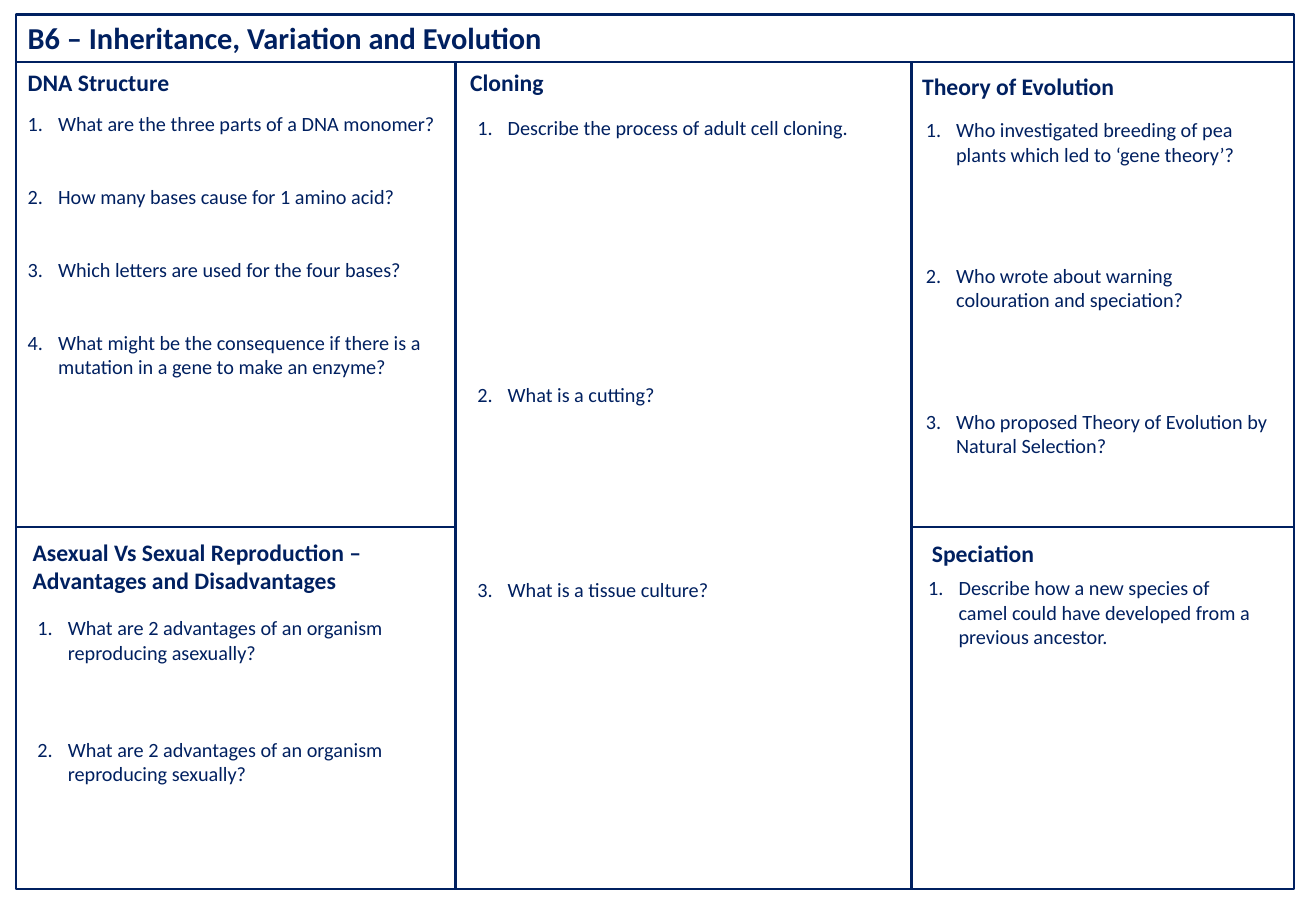
from lxml.etree import SubElement
from pptx import Presentation
from pptx.dml.color import RGBColor
from pptx.enum.shapes import MSO_SHAPE
from pptx.enum.text import MSO_AUTO_SIZE
from pptx.oxml.ns import qn
from pptx.util import Pt

PX = 9144  # EMU per px, 100 px to the inch
COLORS = {"navy": "002060"}
FONT = "Calibri"
TITLE_SIZE, HEADING_SIZE, BODY_SIZE = 18, 14, 12
BODY_LINE = 14.4  # height of one answer line, in points
INDENT = 25

# Column and row edges of the worksheet
X1, X2, X3, X4 = 13, 375, 750, 1065
Y1, Y2, Y3, Y4 = 12, 51, 434, 732

# frame, heading, heading box, question box, answer lines after each question
PANELS = [
    ((X1, Y2, X2, Y3), "DNA Structure", (13, 51, 456, 34), (13, 87, 362, 232), [
        ("What are the three parts of a DNA monomer?", 2),
        ("How many bases cause for 1 amino acid?", 2),
        ("Which letters are used for the four bases?", 2),
        ("What might be the consequence if there is a mutation in a gene "
         "to make an enzyme?", 0)]),
    ((X2, Y2, X3, Y4), "Cloning", (377, 51, 122, 34), (383, 90, 362, 414), [
        ("Describe the process of adult cell cloning.", 10),
        ("What is a cutting?", 7),
        ("What is a tissue culture?", 0)]),
    ((X3, Y2, X4, Y3), "Theory of Evolution", (749, 54, 254, 34), (752, 92, 302, 293), [
        ("Who investigated breeding of pea plants which led to ‘gene theory’?", 4),
        ("Who wrote about warning colouration and speciation?", 4),
        ("Who proposed Theory of Evolution by Natural Selection?", 0)]),
    ((X1, Y3, X2, Y4), "Asexual Vs Sexual Reproduction – Advantages and Disadvantages",
     (17, 438, 322, 57), (21, 502, 322, 151), [
        ("What are 2 advantages of an organism reproducing asexually?", 3),
        ("What are 2 advantages of an organism reproducing sexually?", 0)]),
    ((X3, Y3, X4, Y4), "Speciation", (757, 439, 152, 34), (754, 469, 292, 71), [
        ("Describe how a new species of camel could have developed from a "
         "previous ancestor.", 0)]),
]


class Sheet:
    def __init__(self, slide, color, font):
        self.s = slide
        self.color = RGBColor.from_string(color)
        self.font = font

    def frame(self, left, top, right, bottom):
        """Draw an outlined rectangle between the given edges."""
        box = (left, top, right - left, bottom - top)
        sp = self.s.shapes.add_shape(MSO_SHAPE.RECTANGLE, *(v * PX for v in box))
        sp.shadow.inherit = False
        sp.fill.background()
        sp.line.color.rgb = self.color
        sp.line.width = Pt(1.5)

    def text_box(self, box):
        tf = self.s.shapes.add_textbox(*(v * PX for v in box)).text_frame
        tf.word_wrap = True
        tf.auto_size = MSO_AUTO_SIZE.SHAPE_TO_FIT_TEXT
        return tf

    def run(self, p, text, size, bold=False):
        r = p.add_run()
        r.text = text
        r.font.name = self.font
        r.font.size = Pt(size)
        r.font.bold = bold
        r.font.color.rgb = self.color

    def heading(self, text, box, size=HEADING_SIZE):
        self.run(self.text_box(box).paragraphs[0], text, size, bold=True)

    def questions(self, items, box):
        """Number the questions and leave answer lines after each one."""
        tf = self.text_box(box)
        for i, (text, answer_lines) in enumerate(items):
            p = tf.add_paragraph() if i else tf.paragraphs[0]
            p.space_after = Pt(answer_lines * BODY_LINE)
            pPr = p._p.get_or_add_pPr()
            pPr.set("marL", str(INDENT * PX))
            pPr.set("indent", str(-INDENT * PX))
            SubElement(pPr, qn("a:buFont"), typeface="+mj-lt")
            SubElement(pPr, qn("a:buAutoNum"), type="arabicPeriod")
            self.run(p, text, BODY_SIZE)


def main():
    prs = Presentation()
    prs.slide_width, prs.slide_height = 1083 * PX, 750 * PX
    slide = prs.slides.add_slide(prs.slide_layouts[6])
    sheet = Sheet(slide, COLORS["navy"], FONT)

    sheet.frame(X1, Y1, X4, Y2)
    sheet.heading("B6 – Inheritance, Variation and Evolution", (13, 11, 527, 40), TITLE_SIZE)
    for edges, heading, heading_box, question_box, items in PANELS:
        sheet.frame(*edges)
        sheet.heading(heading, heading_box)
        sheet.questions(items, question_box)

    prs.save("out.pptx")


if __name__ == "__main__":
    main()
